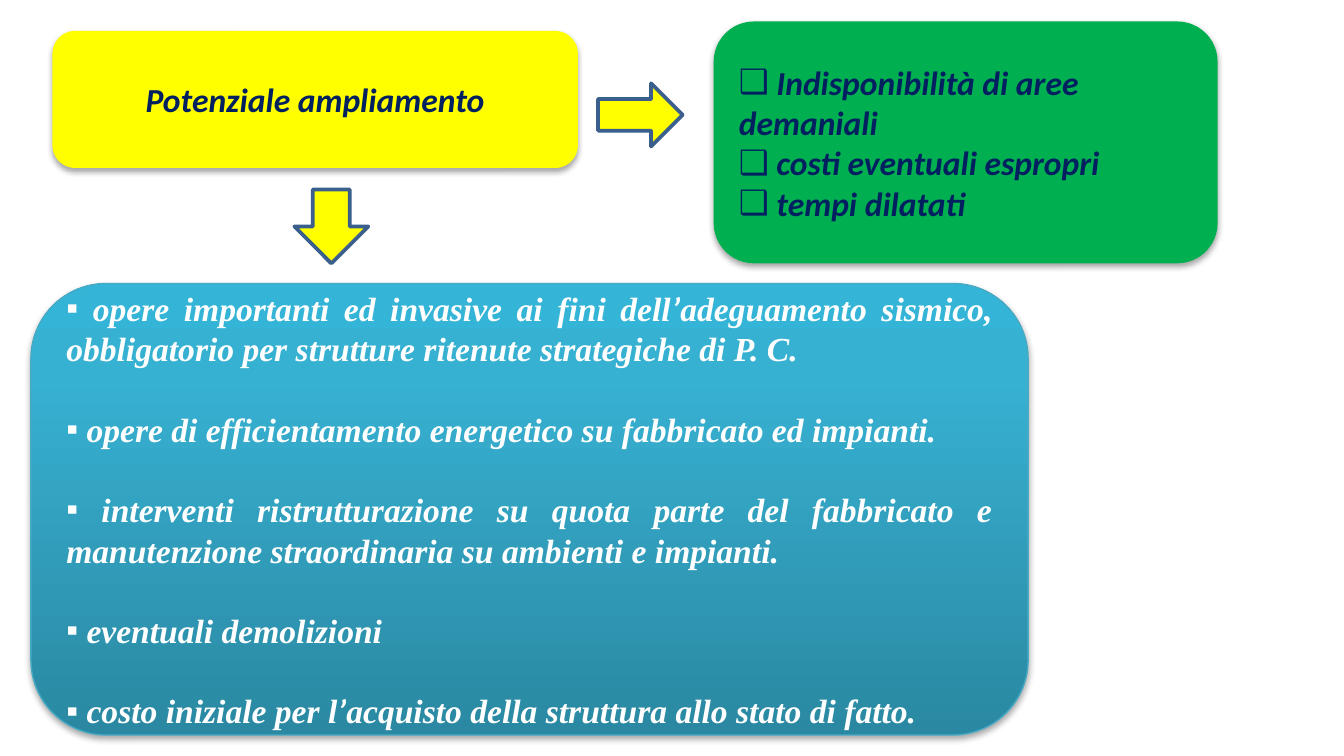
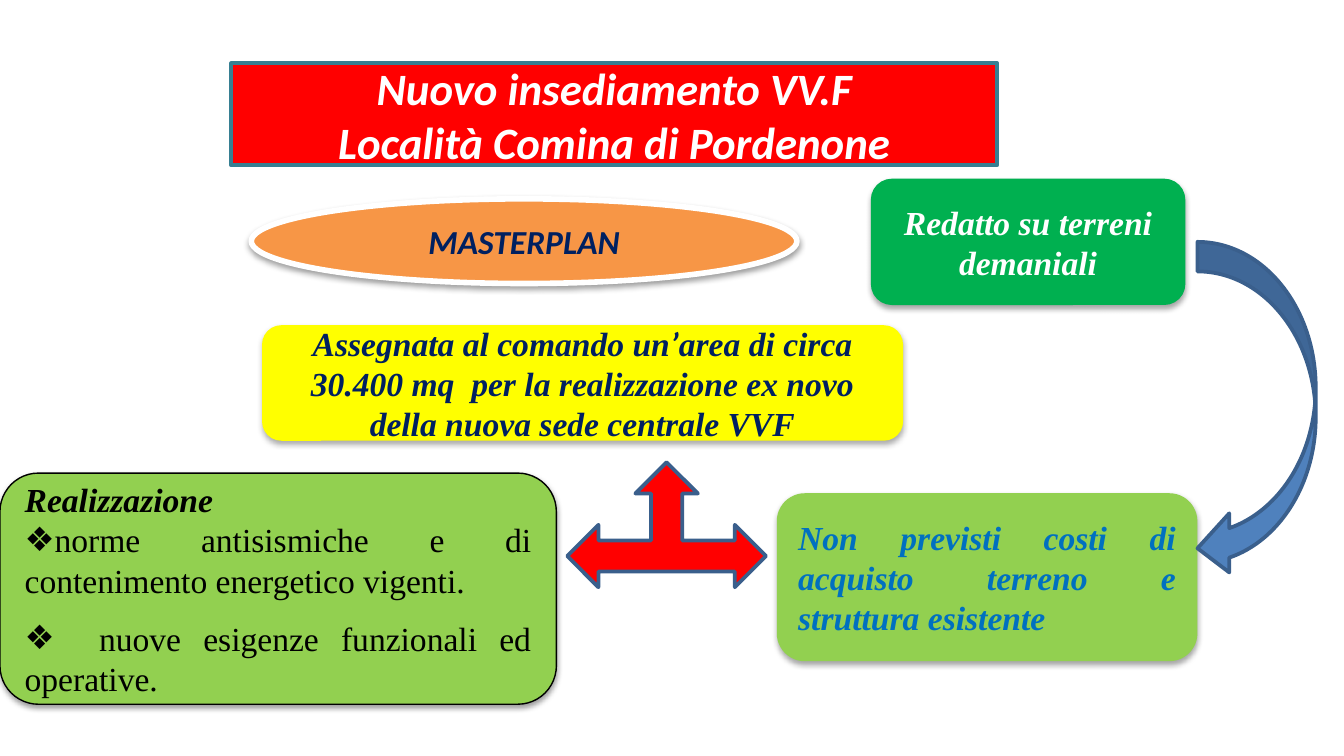
"""Two slides on enlarging the present fire station or building a new one."""
from copy import deepcopy
from dataclasses import dataclass

from lxml import etree
from pptx import Presentation
from pptx import util as u
from pptx.dml.color import RGBColor
from pptx.enum import shapes, text
from pptx.oxml.ns import qn

PX = 9144
WIDTH = 1000

WHITE = RGBColor(0xFF, 0xFF, 0xFF)
BLACK = RGBColor(0x00, 0x00, 0x00)
NAVY = RGBColor(0x00, 0x20, 0x60)
BLUE = RGBColor(0x00, 0x70, 0xC0)
YELLOW = RGBColor(0xFF, 0xFF, 0x00)
GREEN = RGBColor(0x00, 0xB0, 0x50)
LIME = RGBColor(0x92, 0xD0, 0x50)
RED = RGBColor(0xFF, 0x00, 0x00)
ORANGE = RGBColor(0xF7, 0x96, 0x46)
STEEL = RGBColor(0x4F, 0x81, 0xBD)
ARROW_EDGE = RGBColor(0x3A, 0x5F, 0x8C)
TITLE_EDGE = RGBColor(0x37, 0x7F, 0x92)
POOL_EDGE = RGBColor(0x46, 0xAA, 0xC5)
POOL = (
    (0, RGBColor(0x2A, 0x88, 0xA2)),
    (0.8, RGBColor(0x37, 0xB1, 0xD2)),
    (1, RGBColor(0x34, 0xB4, 0xD6)),
)

SANS, SERIF = "Calibri", "Times New Roman"
APOSTROPHE = "’"
FORM = shapes.MSO_SHAPE
LEFT, CENTER, JUSTIFY = text.PP_ALIGN.LEFT, text.PP_ALIGN.CENTER, text.PP_ALIGN.JUSTIFY
ROUNDED_SHADOW = (35, 1.8)
EDGED_SHADOW = (38, 1.6)


@dataclass
class Panel:
    """A filled outline with its wording; holder is a placeholder index."""
    at: tuple
    fill: object
    lines: tuple = ()
    heading: str = ""
    form: object = FORM.ROUNDED_RECTANGLE
    holder: object = None
    edge: object = None
    shadow: object = ROUNDED_SHADOW
    font: str = SERIF
    size: int = 18
    ink: RGBColor = NAVY
    strong: bool = True
    align: object = CENTER
    bullet: str = ""
    gap: float = 0
    adjust: tuple = ()


def arrow(at, fill, form, adjust=()):
    """Describe a block arrow."""
    return Panel(at, fill, form=form, edge=(ARROW_EDGE, 2), shadow=None, adjust=adjust)


EXPANSION = (
    Panel((39, 23, 391, 102), YELLOW, ("Potenziale ampliamento",), font=SANS),
    Panel((531, 16, 375, 180), GREEN,
          (" Indisponibilità di aree demaniali",
           " costi eventuali espropri",
           " tempi dilatati"),
          holder=2, font=SANS, align=LEFT, bullet="❑"),
    Panel((23, 211, 742, 336), POOL,
          (" opere importanti ed invasive ai fini dell’adeguamento sismico, "
           "obbligatorio per strutture ritenute strategiche di P. C.",
           " opere di efficientamento energetico su fabbricato ed impianti.",
           " interventi ristrutturazione su quota parte del fabbricato e "
           "manutenzione straordinaria su ambienti e impianti.",
           " eventuali demolizioni",
           " costo iniziale per l’acquisto della struttura allo stato di fatto."),
          holder=1, edge=(POOL_EDGE, 0.75), ink=WHITE, align=JUSTIFY, bullet="▪", gap=21.5),
    arrow((219, 141, 55, 55), YELLOW, FORM.DOWN_ARROW),
    arrow((445, 62, 63, 47), YELLOW, FORM.RIGHT_ARROW),
)

NEW_SITE = (
    Panel((172, 47, 570, 76), RED,
          ("Nuovo insediamento VV.F", "Località Comina di Pordenone"),
          form=FORM.RECTANGLE, holder=0, edge=(TITLE_EDGE, 2), shadow=None,
          font=SANS, size=24, ink=WHITE),
    Panel((578, 367, 313, 125), LIME,
          ("Non previsti costi di acquisto terreno e struttura esistente",),
          ink=BLUE, align=JUSTIFY),
    Panel((0, 352, 414, 172), LIME,
          ("norme antisismiche e di contenimento energetico vigenti.",
           "  nuove esigenze funzionali ed operative."),
          heading="Realizzazione", holder=1, edge=(BLACK, 0.75), shadow=EDGED_SHADOW,
          ink=BLACK, strong=False, align=JUSTIFY, bullet="❖", gap=9.5),
    Panel((195, 242, 477, 86), YELLOW,
          ("Assegnata al comando un’area di circa 30.400 mq  per la "
           "realizzazione ex novo della nuova sede centrale VVF",)),
    Panel((648, 133, 234, 94), GREEN, ("Redatto su terreni demaniali",), ink=WHITE),
    Panel((187, 148, 406, 63), ORANGE, ("MASTERPLAN",), form=FORM.OVAL,
          edge=(WHITE, 3), shadow=EDGED_SHADOW, font=SANS),
    arrow((891, 180, 88, 250), STEEL, FORM.CURVED_LEFT_ARROW, (0.25, 0.5, 0.269)),
    arrow((422, 344, 148, 93), RED, FORM.LEFT_RIGHT_UP_ARROW),
)

TWO_LISTS, ONE_LIST = 3, 1
DECK = ((TWO_LISTS, EXPANSION), (ONE_LIST, NEW_SITE))


def outline(slide, panel):
    """Place the panel's shape, or move and reshape its placeholder."""
    box = [side * PX for side in panel.at]
    if panel.holder is None:
        shape = slide.shapes.add_shape(panel.form, *box)
        for index, value in enumerate(panel.adjust):
            shape.adjustments[index] = value
        return shape
    shape = slide.placeholders[panel.holder]
    shape.left, shape.top, shape.width, shape.height = box
    preset = "rect" if panel.form == FORM.RECTANGLE else "roundRect"
    geometry = etree.SubElement(shape._element.spPr, qn("a:prstGeom"), prst=preset)
    etree.SubElement(geometry, qn("a:avLst"))
    return shape


def paint(shape, panel):
    """Set fill, edge and shadow."""
    if isinstance(panel.fill, RGBColor):
        shape.fill.solid()
        shape.fill.fore_color.rgb = panel.fill
    else:
        shape.fill.gradient()
        shape.fill.gradient_angle = 90
        stops = next(shape._element.spPr.iter(qn("a:gsLst")))
        stops.insert(1, deepcopy(stops[0]))
        for stop, (position, color) in zip(shape.fill.gradient_stops, panel.fill):
            stop.position = position
            stop.color.rgb = color
    if panel.edge:
        shape.line.color.rgb = panel.edge[0]
        shape.line.width = u.Pt(panel.edge[1])
    else:
        shape.line.fill.background()
    shape.shadow.inherit = False
    if panel.shadow:
        alpha, distance = panel.shadow
        effects = shape._element.spPr.find(qn("a:effectLst"))
        shade = etree.SubElement(
            effects, qn("a:outerShdw"), blurRad=str(u.Pt(3.1)), dist=str(u.Pt(distance)),
            dir="5400000", rotWithShape="0")
        color = etree.SubElement(shade, qn("a:srgbClr"), val=str(BLACK))
        etree.SubElement(color, qn("a:alpha"), val=str(alpha * 1000))


def write_line(paragraph, words, panel, bullet, strong, gap):
    """Write one paragraph; the apostrophe is always sans."""
    paragraph.alignment = panel.align
    paragraph.space_before = u.Pt(gap)
    properties = paragraph._p.get_or_add_pPr()
    properties.set("marL", "0")
    properties.set("indent", "0")
    if bullet:
        etree.SubElement(properties, qn("a:buChar"), char=bullet)
    else:
        etree.SubElement(properties, qn("a:buNone"))
    for part in filter(None, words.partition(APOSTROPHE)):
        run = paragraph.add_run()
        run.text = part
        run.font.name = SANS if part == APOSTROPHE else panel.font
        run.font.size = u.Pt(panel.size)
        run.font.bold = run.font.italic = strong
        run.font.color.rgb = panel.ink


def write(shape, panel):
    """Write the heading and the lines of a panel."""
    frame = shape.text_frame
    frame.word_wrap = True
    frame.auto_size = text.MSO_AUTO_SIZE.NONE
    frame.vertical_anchor = text.MSO_ANCHOR.MIDDLE
    rows = [(panel.heading, "", True, 0)] if panel.heading else []
    rows += [(words, panel.bullet, panel.strong, panel.gap if index else 0)
             for index, words in enumerate(panel.lines)]
    for index, row in enumerate(rows):
        paragraph = frame.add_paragraph() if index else frame.paragraphs[0]
        write_line(paragraph, row[0], panel, *row[1:])


def drop_empty(slide):
    """Remove the placeholders that hold no wording."""
    for holder in list(slide.placeholders):
        if not holder.text_frame.text:
            slide.shapes._spTree.remove(holder._element)


def main():
    """Build and save the deck."""
    deck = Presentation()
    deck.slide_width = WIDTH * PX
    deck.slide_height = WIDTH * PX * 9 // 16
    for layout, panels in DECK:
        slide = deck.slides.add_slide(deck.slide_layouts[layout])
        for panel in panels:
            shape = outline(slide, panel)
            paint(shape, panel)
            if panel.lines:
                write(shape, panel)
        drop_empty(slide)
    deck.save("out.pptx")


if __name__ == "__main__":
    main()
